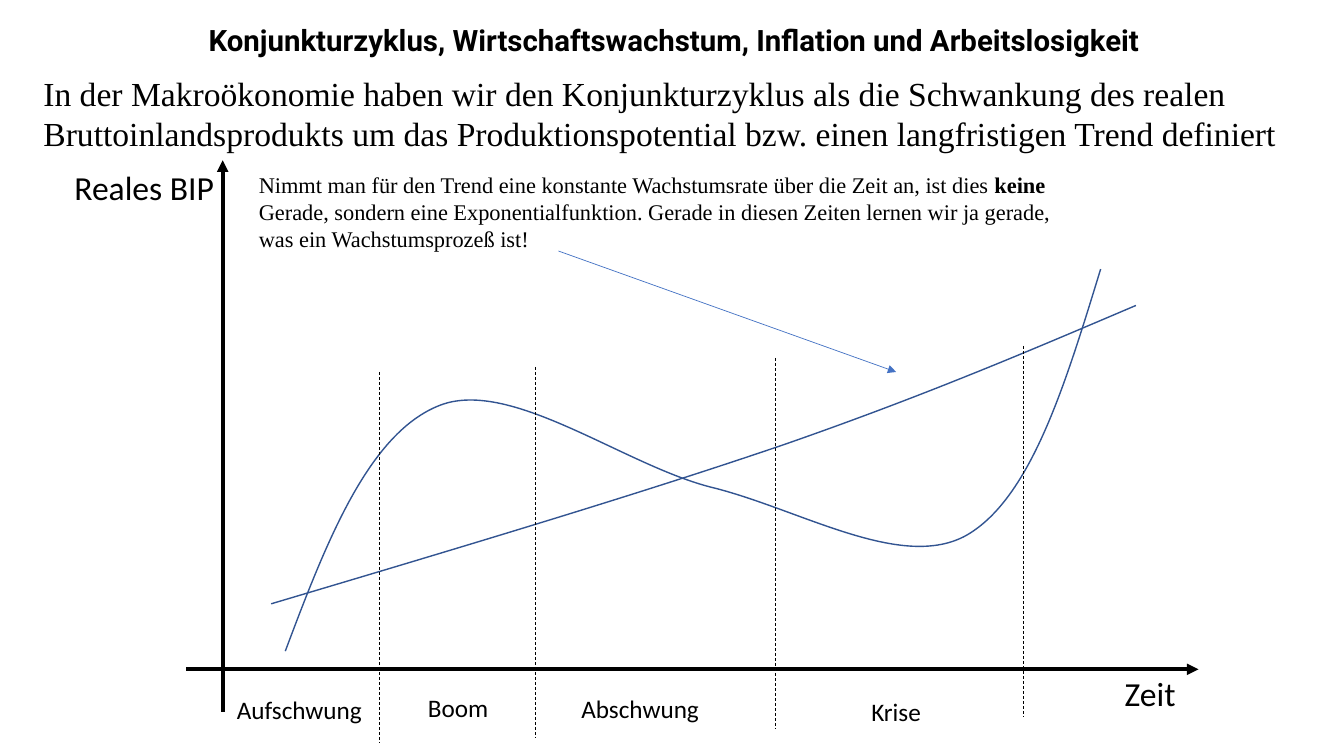
import pptx
import pptx.util
import pptx.dml.color
import pptx.enum.dml
import pptx.enum.shapes
import pptx.enum.text
import pptx.oxml
import pptx.oxml.ns
from dataclasses import dataclass

Pt = pptx.util.Pt
ALIGN = pptx.enum.text.PP_ALIGN

# ---- Content (lengths in points) ----
TITLE = "Konjunkturzyklus, Wirtschaftswachstum, Inflation und Arbeitslosigkeit"
DEFINITION = ("In der Makroökonomie haben wir den Konjunkturzyklus als die Schwankung des realen "
              "Bruttoinlandsprodukts um das Produktionspotential bzw. einen langfristigen Trend definiert")
NOTE = [
    ("Nimmt man für den Trend eine konstante Wachstumsrate über die Zeit an, ist dies ", False),
    ("keine ", True),
    ("Gerade, sondern eine Exponentialfunktion. Gerade in diesen Zeiten lernen wir ja gerade, "
     "was ein Wachstumsprozeß ist!", False),
]
AXIS_LABELS = [("Zeit", (796.3, 477.4, 51.1, 36)), ("Reales BIP", (46.1, 115.9, 115.2, 36))]
PHASES = [  # name, label box
    ("Aufschwung", (161.3, 492.5, 105.1, 29)),
    ("Boom", (298.1, 491, 58.3, 29)),
    ("Abschwung", (407.5, 491.8, 99.4, 29)),
    ("Krise", (614.9, 493.9, 50.4, 29)),
]
PHASE_ENDS = [(270.7, 265.7), (382.3, 262.1), (553.7, 255.6), (730.8, 247)]  # x, top
PHASE_LINE_HEIGHT = 264.4
AXES = [((159.1, 508.3), (159.1, 114.5)), ((133.2, 478.1), (856.1, 478.1))]
NOTE_ARROW = ((398.9, 179.3), (640.1, 265.7))

# Curves: a start point, then two control points and an end point per segment
TREND = [(193.7, 431.3), (326.9, 391.7), (459.4, 352.1), (562.3, 316.8),
         (665.3, 280.8), (738.7, 249.1), (811.4, 218.2)]
CYCLE = [(203.8, 465.1), (233.3, 386.6), (263.5, 308.9), (314.6, 289.4),
         (365.8, 270), (447.1, 333.4), (509.8, 348.5),
         (572.4, 364.3), (644.4, 408.2), (690.5, 382.3),
         (736.6, 355.7), (761, 274.3), (786.2, 192.2)]


@dataclass(frozen=True)
class Theme:
    ink: str = "000000"
    curve: str = "325491"
    arrow: str = "4472C4"
    title_font: str = "Roboto"
    body_font: str = "Times New Roman"
    label_font: str = "Calibri"
    title_size: float = 21
    body_size: float = 24
    note_size: float = 16
    axis_size: float = 24
    phase_size: float = 18
    axis_width: float = 2.75
    curve_width: float = 1
    thin_width: float = 0.5


theme = Theme()


# ---- Helpers ----
def place(shape, box):
    shape.left, shape.top, shape.width, shape.height = (Pt(value) for value in box)


def fill_text(shape, spans, font, size, align=ALIGN.LEFT, wrap=True,
              anchor=pptx.enum.text.MSO_ANCHOR.TOP):
    frame = shape.text_frame
    frame.auto_size = pptx.enum.text.MSO_AUTO_SIZE.NONE
    frame.word_wrap = wrap
    frame.vertical_anchor = anchor
    para = frame.paragraphs[0]
    para.alignment = align
    para.space_before = Pt(0)
    for text, bold in spans:
        span = para.add_run()
        span.text = text
        span.font.name = font
        span.font.size = Pt(size)
        span.font.bold = bold
        span.font.color.rgb = pptx.dml.color.RGBColor.from_string(theme.ink)


def add_label(page, text, box, size, align):
    label = page.shapes.add_textbox(*(Pt(value) for value in box))
    fill_text(label, [(text, False)], theme.label_font, size, align, wrap=False)


def style_line(line, color, width):
    line.color.rgb = pptx.dml.color.RGBColor.from_string(color)
    line.width = Pt(width)


def add_line(page, start, end, color, width, dashed=False, arrow=False):
    connector = page.shapes.add_connector(
        pptx.enum.shapes.MSO_CONNECTOR.STRAIGHT, *(Pt(value) for value in start + end))
    style_line(connector.line, color, width)
    if dashed:
        connector.line.dash_style = pptx.enum.dml.MSO_LINE.DASH
    properties = connector._element.spPr
    if arrow:
        outline = properties.find(pptx.oxml.ns.qn("a:ln"))
        outline.append(outline.makeelement(pptx.oxml.ns.qn("a:tailEnd"), {"type": "triangle"}))
    properties.append(properties.makeelement(pptx.oxml.ns.qn("a:effectLst"), {}))


def add_curve(page, points):
    corners = [(Pt(x), Pt(y)) for x, y in points]
    builder = page.shapes.build_freeform(*corners[0])
    builder.add_line_segments(corners[1:], close=False)
    curve = builder.convert_to_shape()
    curve.shadow.inherit = False
    curve.fill.background()
    style_line(curve.line, theme.curve, theme.curve_width)
    # Join each three straight steps into one Bézier segment
    steps = list(curve._element.iter(pptx.oxml.ns.qn("a:lnTo")))
    for first in range(0, len(steps), 3):
        segment = steps[first].makeelement(pptx.oxml.ns.qn("a:cubicBezTo"), {})
        steps[first].addprevious(segment)
        for step in steps[first:first + 3]:
            segment.append(step[0])
            step.getparent().remove(step)


# ---- Deck and page ----
deck = pptx.Presentation()
deck.slide_width, deck.slide_height = Pt(960), Pt(540)
page = deck.slides.add_slide(deck.slide_layouts[1])

# Title and definition
title, body = page.shapes.title, page.placeholders[1]
place(title, (141.8, 12.2, 739.4, 33.1))
fill_text(title, [(TITLE, True)], theme.title_font, theme.title_size,
          anchor=pptx.enum.text.MSO_ANCHOR.MIDDLE)
place(body, (23.8, 48.2, 910.1, 62.6))
body_properties = body.text_frame.paragraphs[0]._p.get_or_add_pPr()
body_properties.set("marL", "0")
body_properties.set("indent", "0")
body_properties.append(body_properties.makeelement(pptx.oxml.ns.qn("a:buNone"), {}))
fill_text(body, [(DEFINITION, False)], theme.body_font, theme.body_size)

# Axes and curves
for start, end in AXES:
    add_line(page, start, end, theme.ink, theme.axis_width, arrow=True)
for points in (TREND, CYCLE):
    add_curve(page, points)

# Labels
for text, box in AXIS_LABELS:
    add_label(page, text, box, theme.axis_size, ALIGN.LEFT)
for text, box in PHASES:
    add_label(page, text, box, theme.phase_size, ALIGN.CENTER)

# Phase borders
for x, top in PHASE_ENDS:
    add_line(page, (x, top), (x, top + PHASE_LINE_HEIGHT), theme.ink, theme.thin_width, dashed=True)

# Note on the trend
note = page.shapes.add_textbox(Pt(177.8), Pt(118.8), Pt(599), Pt(73.4))
fill_text(note, NOTE, theme.body_font, theme.note_size)
add_line(page, *NOTE_ARROW, theme.arrow, theme.thin_width, arrow=True)

deck.save("out.pptx")
